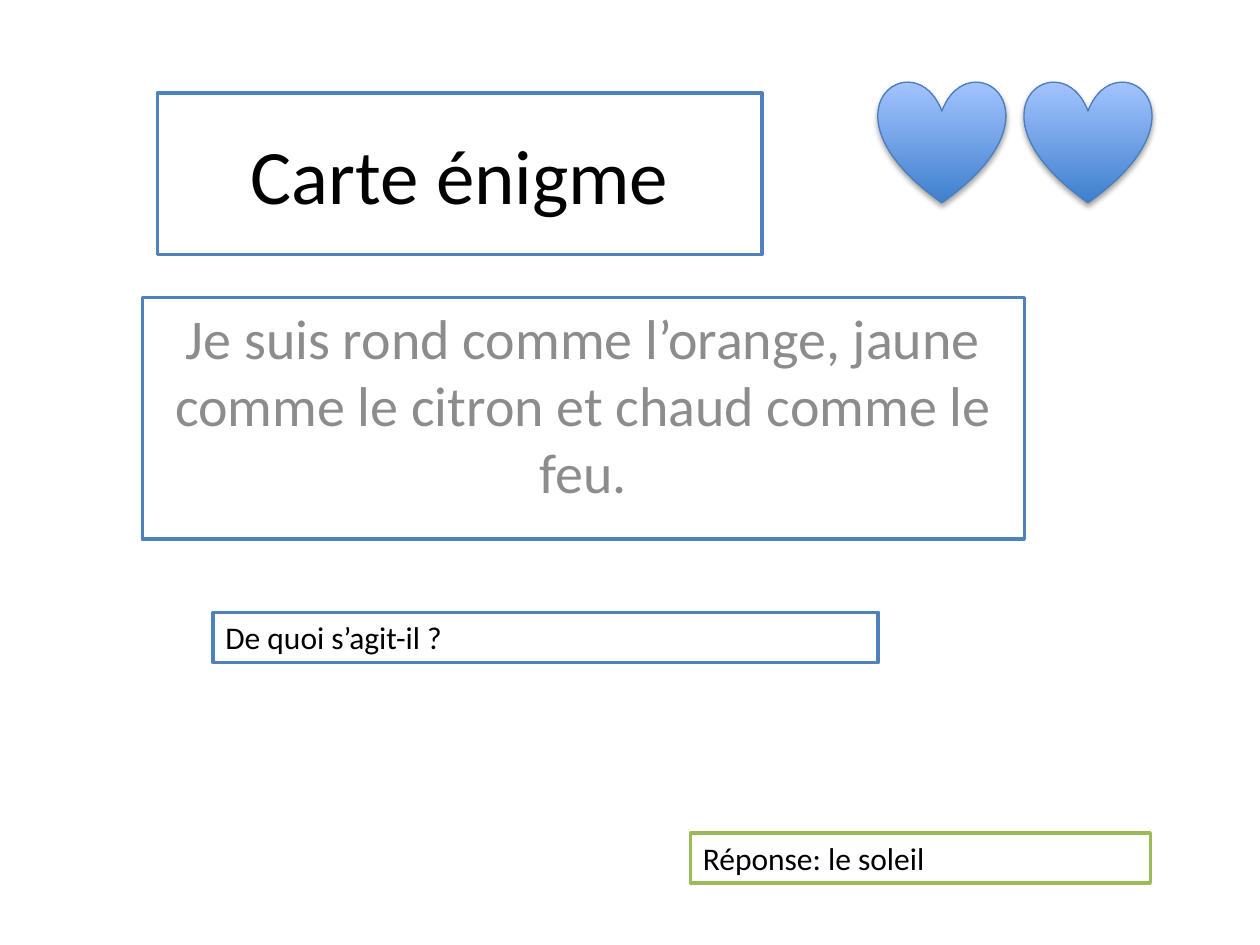
from lxml import etree
from pptx import Presentation
from pptx.dml.color import RGBColor
from pptx.enum.shapes import MSO_SHAPE
from pptx.enum.text import MSO_ANCHOR, PP_ALIGN
from pptx.oxml.ns import qn
from pptx.util import Inches, Pt

RECT, HEART = MSO_SHAPE.RECTANGLE, MSO_SHAPE.HEART
LEFT, CENTER = PP_ALIGN.LEFT, PP_ALIGN.CENTER
TOP, MIDDLE = MSO_ANCHOR.TOP, MSO_ANCHOR.MIDDLE
HUES = {
    "white": "FFFFFF", "black": "000000", "gray": "8C8C8C",
    "blue": "4F81BD", "green": "9BBB59",
    "dark": "3F80CE", "light": "A4C4FF", "edge": "4B7EBC",
}


def hue(name):
    return RGBColor.from_string(HUES[name])


def add(kind, place, line, width):
    """Add an outlined shape without the theme's shadow."""
    shape = slide.shapes.add_shape(kind, *map(Inches, place))
    shape.shadow.inherit = False
    shape.line.color.rgb = hue(line)
    shape.line.width = Pt(width)
    return shape


deck = Presentation()
deck.slide_width, deck.slide_height = Inches(10), Inches(7.5)
slide = deck.slides.add_slide(deck.slide_layouts[6])

# Framed texts: words, place, frame, size, text colour, alignment, anchor
riddle = "Je suis rond comme l’orange, jaune comme le citron et chaud comme le feu."
cards = [
    ("Carte énigme", (1.25, 0.74, 4.8, 1.28), "blue", 44, "black", CENTER, MIDDLE),
    (riddle, (1.13, 2.36, 7, 1.92), "blue", 32, "gray", CENTER, TOP),
    ("De quoi s’agit-il ?", (1.69, 4.86, 5.28, 0.4), "blue", 18, "black", LEFT, TOP),
    ("Réponse: le soleil", (5.48, 6.61, 3.65, 0.4), "green", 18, "black", LEFT, TOP),
]
for words, place, frame, size, ink, align, anchor in cards:
    card = add(RECT, place, frame, 2)
    card.fill.solid()
    card.fill.fore_color.rgb = hue("white")
    text = card.text_frame
    text.word_wrap = True
    text.vertical_anchor = anchor
    para = text.paragraphs[0]
    para.text = words
    para.alignment = align
    para.font.name = "Calibri"
    para.font.size = Pt(size)
    para.font.color.rgb = hue(ink)

# Two hearts side by side, shaded and with a soft shadow below
for col in range(2):
    heart = add(HEART, (6.97 + 1.16 * col, 0.64, 1.01, 0.97), "edge", 0.75)
    heart.fill.gradient()
    heart.fill.gradient_angle = 90
    for stop, name, spot in zip(heart.fill.gradient_stops, ("dark", "light"), (0, 1)):
        stop.color.rgb = hue(name)
        stop.position = spot
    effects = heart._element.spPr.find(qn("a:effectLst"))
    shade = etree.SubElement(effects, qn("a:outerShdw"), blurRad="40000",
                             dist="23000", dir="5400000", rotWithShape="0")
    tint = etree.SubElement(shade, qn("a:srgbClr"), val=HUES["black"])
    etree.SubElement(tint, qn("a:alpha"), val="35000")

deck.save("out.pptx")
